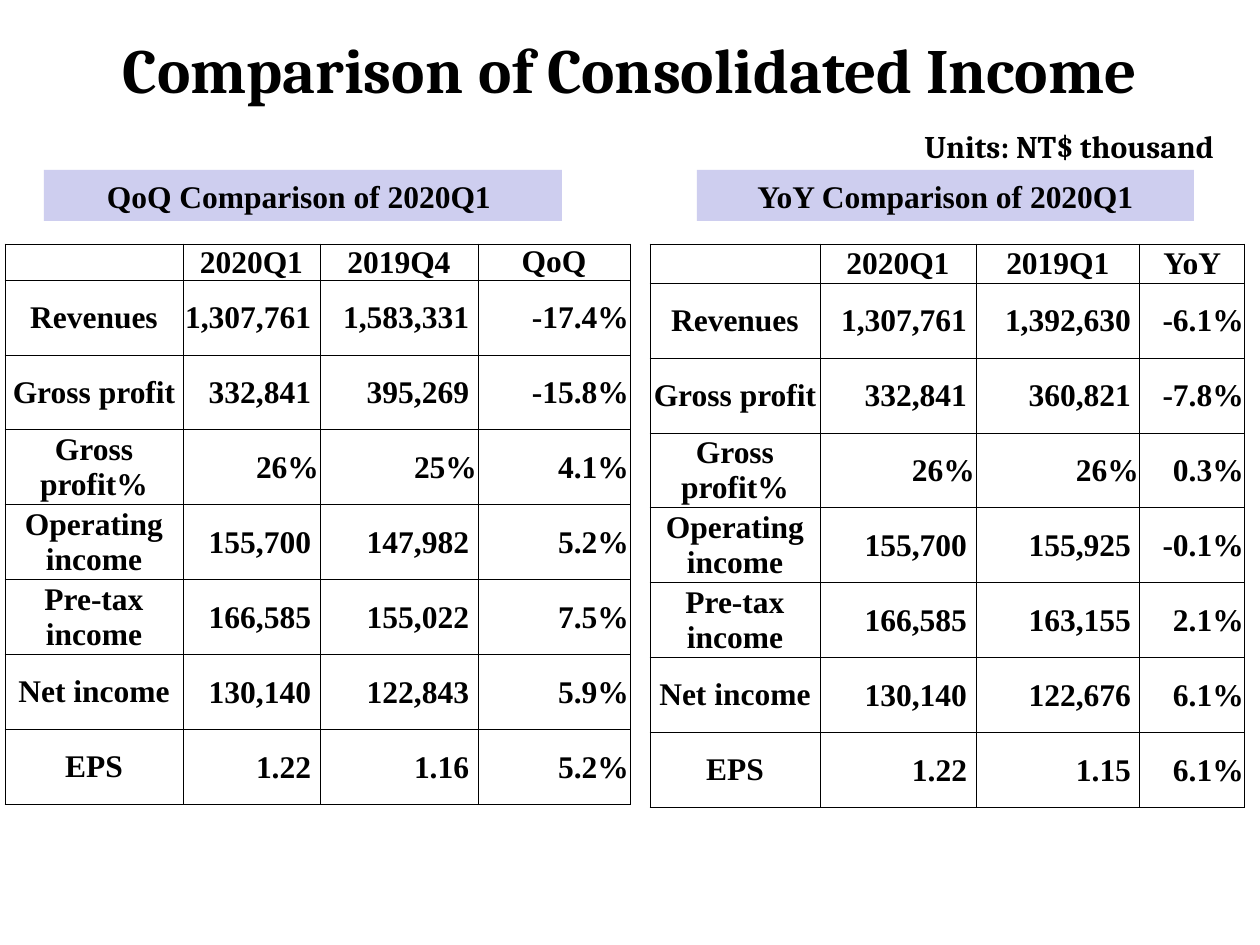
from lxml import etree
from pptx import Presentation
from pptx import util as u
from pptx.dml.color import RGBColor
from pptx.enum import shapes, text
from pptx.oxml.ns import qn

PX = 914400 // 126
HEX = {"ink": "000000", "band": "CECEEF"}
SERIF, HEAD = "Times New Roman", "Cambria"
MID, RIGHT = text.PP_ALIGN.CENTER, text.PP_ALIGN.RIGHT
LABELS = ["Revenues", "Gross profit", "Gross profit%", "Operating income",
          "Pre-tax income", "Net income", "EPS"]
NOW = ["1,307,761 ", "332,841 ", "26%", "155,700 ", "166,585 ", "130,140 ", "1.22 "]
QUARTER = ["1,583,331 ", "395,269 ", "25%", "147,982 ", "155,022 ", "122,843 ", "1.16 "]
YEAR = ["1,392,630 ", "360,821 ", "26%", "155,925 ", "163,155 ", "122,676 ", "1.15 "]
QOQ = ["-17.4%", "-15.8%", "4.1%", "5.2%", "7.5%", "5.9%", "5.2%"]
YOY = ["-6.1%", "-7.8%", "0.3%", "-0.1%", "2.1%", "6.1%", "6.1%"]
TOP, ROW = 244, 75


def px(*nums):
    return [u.Emu(n * PX) for n in nums]


def color(name):
    return RGBColor.from_string(HEX[name])


def add_run(para, words, face=SERIF, size=18, bold=True):
    run = para.add_run()
    run.text = words
    font = run.font
    font.name, font.size, font.bold = face, u.Pt(size), bold
    font.color.rgb = color("ink")


def add_title(slide):
    title = slide.shapes.title
    title.left, title.top, title.width, title.height = px(63, 21, 1134, 95)
    frame = title.text_frame
    frame.auto_size = text.MSO_AUTO_SIZE.NONE
    frame.vertical_anchor = text.MSO_ANCHOR.MIDDLE
    para = frame.paragraphs[0]
    para.alignment = MID
    add_run(para, "Comparison", HEAD, 36)
    add_run(para, " ", "Arial", 32, False)
    add_run(para, "of Consolidated Income", HEAD, 36)


def add_units(slide):
    frame = slide.shapes.add_textbox(*px(912, 121, 348, 50)).text_frame
    frame.word_wrap = True
    add_run(frame.paragraphs[0], "Units: NT$ thousand", HEAD)


def add_band(slide, box, words):
    band = slide.shapes.add_shape(shapes.MSO_SHAPE.RECTANGLE, *px(*box))
    band.shadow.inherit = False
    band.fill.solid()
    band.fill.fore_color.rgb = color("band")
    band.line.fill.background()
    frame = band.text_frame
    frame.word_wrap = True
    frame.vertical_anchor = text.MSO_ANCHOR.MIDDLE
    frame.paragraphs[0].alignment = MID
    add_run(frame.paragraphs[0], words)


def add_edges(cell):
    props = cell._tc.get_or_add_tcPr()
    for side in ("lnL", "lnR", "lnT", "lnB"):
        line = etree.SubElement(props, qn("a:" + side), w=str(u.Pt(0.5)))
        fill = etree.SubElement(line, qn("a:solidFill"))
        etree.SubElement(fill, qn("a:srgbClr"), val=HEX["ink"])


def fill_cell(cell, words, align, inset):
    add_edges(cell)
    cell.fill.background()
    cell.vertical_anchor = text.MSO_ANCHOR.MIDDLE
    cell.margin_left = cell.margin_right = cell.margin_top = u.Emu(inset * PX)
    cell.margin_bottom = 0
    para = cell.text_frame.paragraphs[0]
    para.alignment = align
    if words:
        add_run(para, words)
    else:  # keep the empty corner from stretching its row
        etree.SubElement(para._p, qn("a:endParaRPr"), sz="1200")


def add_grid(slide, left, widths, head, names, *series):
    rows = [names, *zip(LABELS, *series)]
    frame = slide.shapes.add_table(
        len(rows), len(widths),
        *px(left, TOP, sum(widths), head + ROW * len(LABELS)))
    table = frame.table
    table.first_row = table.horz_banding = False
    for col, width in zip(table.columns, px(*widths)):
        col.width = width
    for r, row in enumerate(rows):
        table.rows[r].height = u.Emu((ROW if r else head) * PX)
        for c, words in enumerate(row):
            align = RIGHT if r and c else MID
            flush = c == 0 or (r == 0 and c == len(widths) - 1)
            fill_cell(table.cell(r, c), words, align, 0 if flush else 1)


def main():
    deck = Presentation()
    deck.slide_width, deck.slide_height = px(1260, 945)
    slide = deck.slides.add_slide(deck.slide_layouts[5])
    add_title(slide)

    # Against the quarter before
    add_grid(slide, 5, [178, 137, 158, 152], 36,
             ["", "2020Q1", "2019Q4", "QoQ"], NOW, QUARTER, QOQ)
    add_band(slide, (44, 170, 518, 51), "QoQ Comparison of 2020Q1 ")

    # Against the year before
    add_grid(slide, 650, [170, 156, 164, 105], 39,
             ["", "2020Q1", "2019Q1", "YoY"], NOW, YEAR, YOY)
    add_band(slide, (697, 170, 497, 51), "YoY Comparison of 2020Q1")

    add_units(slide)
    deck.save("out.pptx")


if __name__ == "__main__":
    main()
